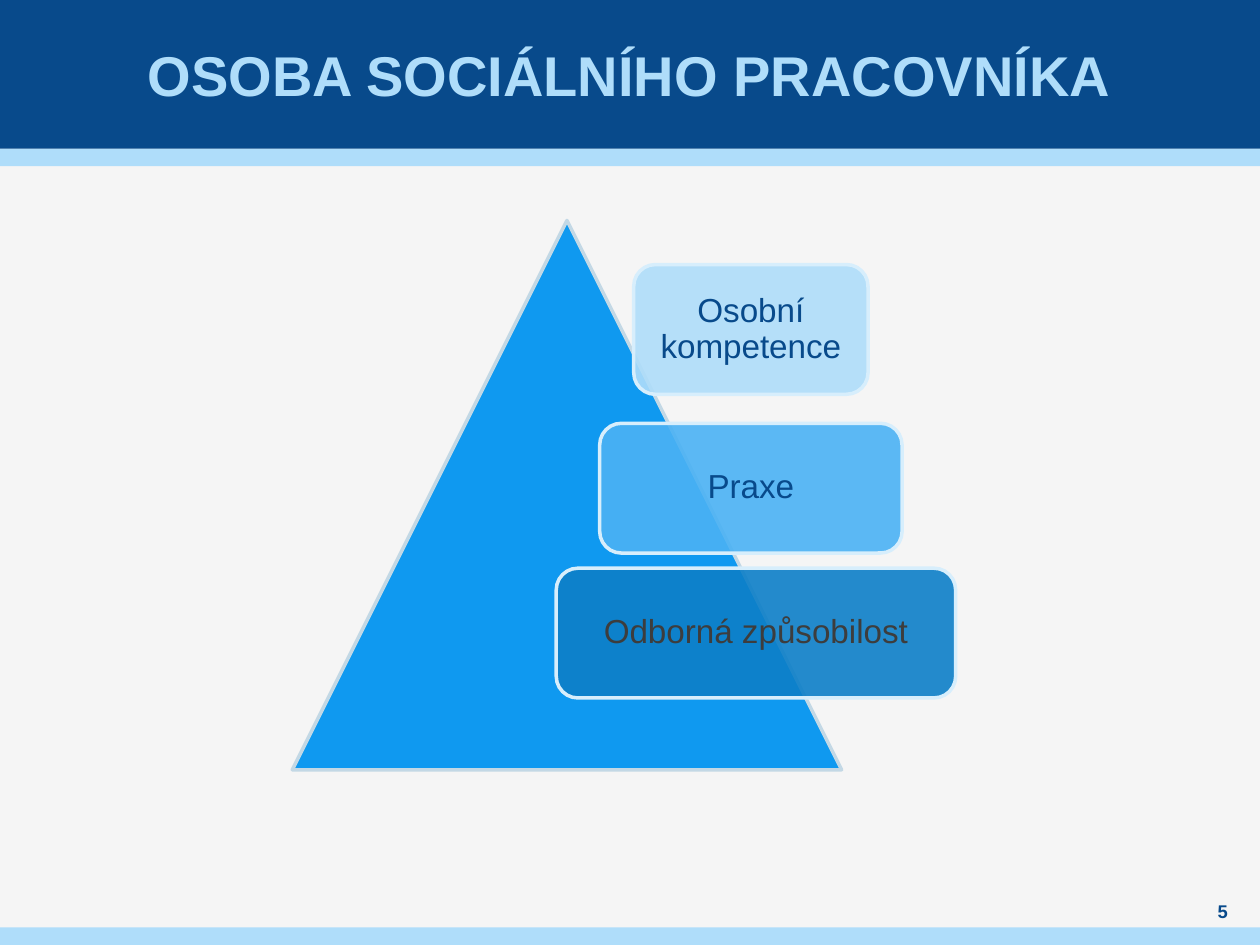
"""Build a slide with a triangle and three overlapping labels."""
from dataclasses import dataclass

from lxml import etree
from pptx import Presentation, util as u
from pptx.dml.color import RGBColor as Rgb
from pptx.enum import shapes, text
from pptx.oxml.ns import qn

WIDE, HIGH = 10, 7.5
KIND = shapes.MSO_SHAPE


@dataclass(frozen=True)
class Theme:
    """Colours and type sizes of the slide."""
    font: str = "Arial"
    paper: str = "F5F5F5"
    navy: str = "084A8B"
    pale: str = "AFDDFA"
    blue: str = "0F99F0"
    sky: str = "4BB2F4"
    deep: str = "0D7FC8"
    grey: str = "3D3D3D"
    edge: str = "C3D8E5"
    rim: str = "D7EEFC"
    head: float = 32
    label: float = 19
    page: float = 10.5


T = Theme()


def place(item, box):
    """Set the position and size of an item in inches."""
    item.left, item.top, item.width, item.height = map(u.Inches, box)


def paint(slide, kind, box, fill, line=None, alpha=None):
    """Add a preset shape with a flat fill and an optional outline."""
    item = slide.shapes.add_shape(kind, *map(u.Inches, box))
    item.shadow.inherit = False
    item.fill.solid()
    item.fill.fore_color.rgb = Rgb.from_string(fill)
    if alpha:
        tint = item.fill._xPr.find(qn("a:solidFill"))[0]
        etree.SubElement(tint, qn("a:alpha")).set("val", str(alpha * 1000))
    if line:
        item.line.color.rgb = Rgb.from_string(line)
        item.line.width = u.Pt(2)
    else:
        item.line.fill.background()
    return item


def write(item, words, size, color, bold=False, pad=(0, 0)):
    """Write one centred run into an item and return its paragraph."""
    frame = item.text_frame
    frame.word_wrap = True
    frame.auto_size = text.MSO_AUTO_SIZE.NONE
    frame.vertical_anchor = text.MSO_ANCHOR.MIDDLE
    frame.margin_left = frame.margin_right = u.Inches(pad[0])
    frame.margin_top = frame.margin_bottom = u.Inches(pad[1])
    para = frame.paragraphs[0]
    para.alignment = text.PP_ALIGN.CENTER
    run = para.add_run()
    run.text = words
    run.font.name, run.font.size, run.font.bold = T.font, u.Pt(size), bold
    run.font.color.rgb = Rgb.from_string(color)
    return para


def bands(slide):
    """Draw the header band and the two thin stripes."""
    head, thin = 1.18, 0.14
    for top, tall, fill in ((head, thin, T.pale), (0, head, T.navy),
                            (HIGH - thin, thin, T.pale)):
        paint(slide, KIND.RECTANGLE, (0, top, WIDE, tall), fill)


def title(slide, words):
    """Fill the title placeholder and bring it above the header band."""
    item = slide.shapes.title
    place(item, (0.39, 0, 9.21, 1.18))
    write(item, words, T.head, T.pale, True, (0.04, 0))
    slide.shapes._spTree.append(item._element)


def page(slide, number):
    """Write the page number at the lower right."""
    item = slide.shapes.add_textbox(*map(u.Inches, (9.45, 7.13, 0.51, 0.2)))
    write(item, number, T.page, T.navy, True)


def label(slide, words, mid, top, wide, fill, color):
    """Add a translucent rounded label centred on mid."""
    box = (mid - wide / 2, top, wide, 1.03)
    item = paint(slide, KIND.ROUNDED_RECTANGLE, box, fill, T.rim, 90)
    para = write(item, words, T.label, color, pad=(0.13, 0.13))
    para.line_spacing = 0.9


def main():
    """Compose and save the slide."""
    deck = Presentation()
    deck.slide_width, deck.slide_height = u.Inches(WIDE), u.Inches(HIGH)
    slide = deck.slides.add_slide(deck.slide_layouts[5])
    slide.background.fill.solid()
    slide.background.fill.fore_color.rgb = Rgb.from_string(T.paper)
    bands(slide)
    title(slide, "OSOBA SOCIÁLNÍHO PRACOVNÍKA")
    page(slide, "5")
    side = 4.36
    paint(slide, KIND.ISOSCELES_TRIANGLE, (2.32, 1.75, side, side),
          T.blue, T.edge)
    for row in (("Praxe", 5.96, 3.36, 2.4, T.sky, T.navy),
                ("Osobní kompetence", 5.96, 2.1, 1.86, T.pale, T.navy),
                ("Odborná způsobilost", 6, 4.51, 3.17, T.deep, T.grey)):
        label(slide, *row)
    deck.save("out.pptx")


if __name__ == "__main__":
    main()
